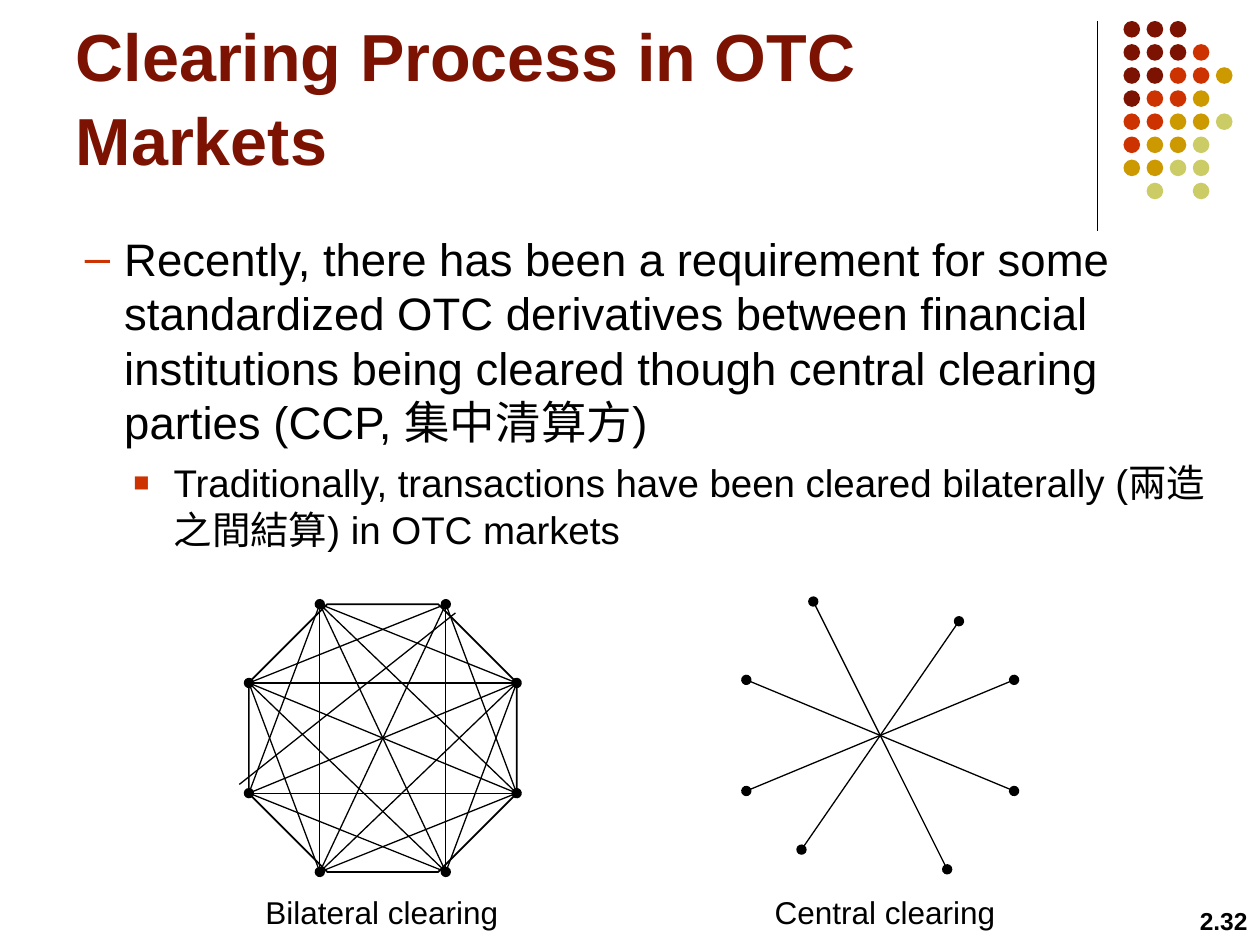
from itertools import combinations

from pptx import Presentation
from pptx.dml.color import RGBColor
from pptx.enum import shapes, text
from pptx.oxml import parse_xml
from pptx.oxml.ns import nsdecls, qn
from pptx.util import Pt

MAROON, RED, GOLD, OLIVE, BLACK = "7C1302", "CC3300", "CC9900", "CCCC66", "000000"
DOT_COLOURS = {"m": MAROON, "r": RED, "g": GOLD, "o": OLIVE}
DOT_ROWS = ["mmm", "mmmr", "mmrrg", "mrrg", "rrggo", "rggo", "ggoo", " o o"]


def colour(value):
    return RGBColor.from_string(value)


def element(tag, **attributes):
    values = " ".join(f'{key}="{value}"' for key, value in attributes.items())
    return parse_xml(f"<a:{tag} {nsdecls('a')} {values}/>")


def write(paragraph, content, size, color=BLACK, bold=False, font="Arial",
          align=text.PP_ALIGN.LEFT, east_asian=None):
    paragraph.alignment = align
    run = paragraph.add_run()
    run.text = content
    run.font.size, run.font.bold, run.font.name = Pt(size), bold, font
    run.font.color.rgb = colour(color)
    if east_asian:
        run._r.rPr.find(qn("a:latin")).addnext(element("ea", typeface=east_asian))


def bullet(paragraph, mark, margin, indent, size=100):
    paragraph.space_before = Pt(6)
    properties = paragraph._p.get_or_add_pPr()
    properties.set("marL", str(Pt(margin)))
    properties.set("indent", str(Pt(indent)))
    bullet_colour = element("buClr")
    bullet_colour.append(element("srgbClr", val=RED))
    properties.extend([bullet_colour, element("buSzPct", val=size * 1000),
                       element("buFont", typeface="Arial"), element("buChar", char=mark)])


def text_box(slide, left, top, width, height):
    frame = slide.shapes.add_textbox(Pt(left), Pt(top), Pt(width), Pt(height)).text_frame
    frame.word_wrap = True
    return frame


def line(slide, start, end, ends=None):
    connector = slide.shapes.add_connector(
        shapes.MSO_CONNECTOR.STRAIGHT, *(Pt(value) for value in (*start, *end)))
    connector.line.color.rgb = colour(BLACK)
    connector.line.width = Pt(0.75)
    if ends:
        connector.line._get_or_add_ln().extend(
            [element("headEnd", type=ends), element("tailEnd", type=ends)])
    connector._element.spPr.append(element("effectLst"))


def dot_ornament(slide, left, top, pitch=13.2, diameter=9.5):
    for row, marks in enumerate(DOT_ROWS):
        for column, mark in enumerate(marks):
            if mark == " ":
                continue
            dot = slide.shapes.add_shape(
                shapes.MSO_SHAPE.OVAL, Pt(left + column * pitch), Pt(top + row * pitch),
                Pt(diameter), Pt(diameter))
            dot.shadow.inherit = False
            dot.fill.solid()
            dot.fill.fore_color.rgb = colour(DOT_COLOURS[mark])
            dot.line.fill.background()


def heading(slide, left, top, width, height):
    title = slide.shapes.title
    title.left, title.top, title.width, title.height = map(Pt, (left, top, width, height))
    frame = title.text_frame
    frame.word_wrap = True
    frame.auto_size = text.MSO_AUTO_SIZE.NONE
    frame.vertical_anchor = text.MSO_ANCHOR.BOTTOM
    frame.paragraphs[0].line_spacing = 1.05
    write(frame.paragraphs[0], "Clearing Process in OTC Markets", 38, MAROON, bold=True)


def explanation(slide, left, top, width, height):
    frame = text_box(slide, left, top, width, height)
    requirement, tradition = frame.paragraphs[0], frame.add_paragraph()
    cjk = "Noto Sans CJK TC"
    bullet(requirement, "–", 49.5, -22.5)
    write(requirement, "Recently, there has been a requirement for some standardized OTC "
          "derivatives between financial institutions being cleared though central "
          "clearing parties (CCP, ", 26)
    write(requirement, "集中清算方", 26, font=cjk, east_asian=cjk)
    write(requirement, ")", 26)
    tradition.level = 1
    bullet(tradition, "■", 77.75, -23, size=70)
    write(tradition, "Traditionally, transactions have been cleared bilaterally "
          "(兩造之間結算) in OTC markets", 22, east_asian=cjk)


def caption(slide, content, left, top, width):
    write(text_box(slide, left, top, width, 29).paragraphs[0], content, 18)


def bilateral_clearing(slide, left, top, side):
    """Octagon whose eight parties are all joined to one another."""
    outline = slide.shapes.add_shape(
        shapes.MSO_SHAPE.OCTAGON, Pt(left), Pt(top), Pt(side), Pt(side))
    outline.adjustments[0] = 0.293
    outline.shadow.inherit = False
    outline.fill.background()
    outline.line.color.rgb = colour(BLACK)
    outline.line.width = Pt(1)

    x1, x2, y1, y2 = 40.5, side - 40.5, 45, side - 45
    parties = [(left + x, top + y) for x, y in (
        (x1, 0), (x2, 0), (side, y1), (side, y2),
        (x2, side), (x1, side), (0, y2), (0, y1))]
    for first, second in combinations(range(8), 2):
        gap = second - first
        if gap in (1, 7):
            continue
        start, end = parties[first], parties[second]
        if (first, second) == (1, 6):  # this chord sits slightly askew
            start, end = (start[0] + 5.5, start[1] + 5), (end[0] - 5.5, end[1] - 5)
        line(slide, start, end, "oval" if gap == 4 else None)


def central_clearing(slide, left, top, side):
    """Parties joined only through the centre."""
    centre = side / 2
    for dx, dy in ((38.25, 76.5), (-45, 65.25), (76.5, 31.75), (76.5, -31.75)):
        line(slide, (left + centre - dx, top + centre - dy),
             (left + centre + dx, top + centre + dy), "oval")


def main():
    deck = Presentation()
    deck.slide_width, deck.slide_height = Pt(720), Pt(540)
    slide = deck.slides.add_slide(deck.slide_layouts[5])
    line(slide, (627, 12), (627, 132))
    dot_ornament(slide, 642, 12)
    heading(slide, 36, 32.4, 590.4, 73.4)
    explanation(slide, 14.4, 128.2, 697.7, 402.5)
    page_number = text_box(slide, 552.2, 514, 167.8, 26)
    write(page_number.paragraphs[0], "2.32", 14, bold=True, align=text.PP_ALIGN.RIGHT)
    bilateral_clearing(slide, 142.25, 345.25, 153)
    central_clearing(slide, 426.5, 343.75, 153)
    caption(slide, "Bilateral clearing", 144.6, 507, 151.2)
    caption(slide, "Central clearing", 435.6, 507, 177)
    deck.save("out.pptx")


if __name__ == "__main__":
    main()
